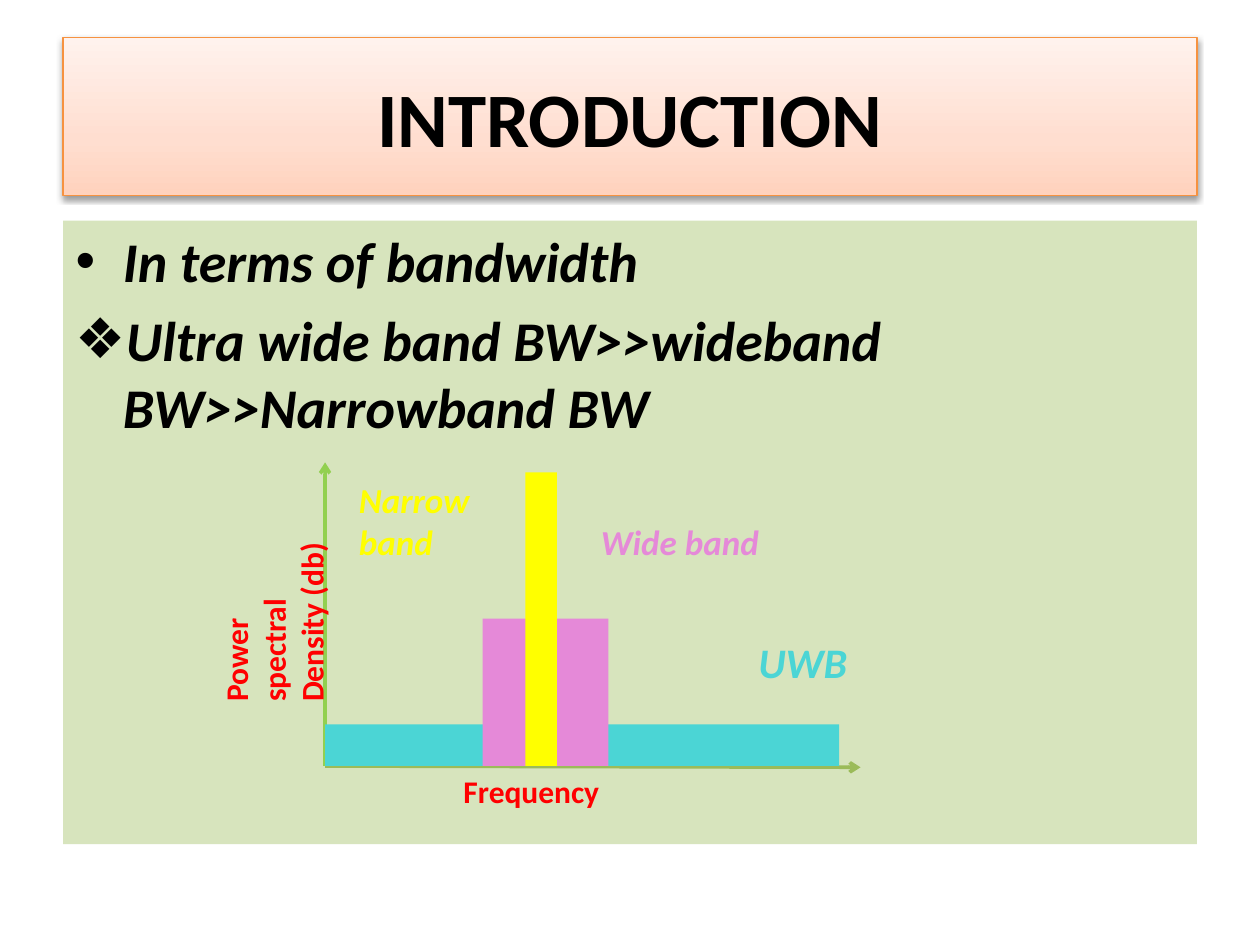
import pptx
import pptx.util
import pptx.dml.color
import pptx.enum.shapes
import pptx.enum.text
import pptx.oxml
import pptx.oxml.ns

Inches, Pt = pptx.util.Inches, pptx.util.Pt
NS = pptx.oxml.ns.nsdecls("a")


def color(hex_string):
    return pptx.dml.color.RGBColor.from_string(hex_string)


def add_run(p, text, size, hex_string, italic=False):
    r = p.add_run()
    r.text = text
    r.font.name = "Calibri"
    r.font.size = Pt(size)
    r.font.bold = True
    r.font.italic = italic
    r.font.color.rgb = color(hex_string)


prs = pptx.Presentation()
prs.slide_width, prs.slide_height = Inches(10), Inches(7.5)
s = prs.slides.add_slide(prs.slide_layouts[1])

# Title with gradient and soft shadow
title = s.shapes.title
title.left, title.top, title.width, title.height = [Inches(v) for v in (0.5, 0.3, 9, 1.25)]
title.line.color.rgb = color("F69240")
title.line.width = Pt(0.75)
stops = "".join(
    f'<a:gs pos="{pos * 1000}"><a:srgbClr val="{c}"/></a:gs>'
    for pos, c in ((0, "FFD2BD"), (35, "FFDED0"), (100, "FFF2ED")))
title._element.spPr.find(pptx.oxml.ns.qn("a:ln")).addprevious(pptx.oxml.parse_xml(
    f'<a:gradFill {NS} rotWithShape="1"><a:gsLst>{stops}</a:gsLst>'
    '<a:lin ang="16200000" scaled="1"/></a:gradFill>'))
title._element.spPr.append(pptx.oxml.parse_xml(
    f'<a:effectLst {NS}><a:outerShdw blurRad="{Pt(3.1)}" dist="{Pt(1.6)}" dir="5400000" '
    'rotWithShape="0"><a:srgbClr val="000000"><a:alpha val="38000"/></a:srgbClr>'
    '</a:outerShdw></a:effectLst>'))
p = title.text_frame.paragraphs[0]
p.alignment = pptx.enum.text.PP_ALIGN.CENTER
add_run(p, "INTRODUCTION", 44, "000000")

# Body list
body = s.placeholders[1]
body.left, body.top, body.width, body.height = [Inches(v) for v in (0.5, 1.75, 9, 4.95)]
body.fill.solid()
body.fill.fore_color.rgb = color("D7E4BD")
tf = body.text_frame
p = tf.paragraphs[0]
add_run(p, "In terms of bandwidth", 32, "000000", True)
p = tf.add_paragraph()
add_run(p, "Ultra wide band BW>>wideband BW>>Narrowband BW", 32, "000000", True)
pPr = p._p.get_or_add_pPr()
pPr.append(pptx.oxml.parse_xml(f'<a:buFont {NS} typeface="Arial"/>'))
pPr.append(pptx.oxml.parse_xml(f'<a:buChar {NS} char="❖"/>'))

# Axes
origin_x, base = 2.58, 6.08
for end_x, end_y, c in ((6.83, 6.09, "9BBB59"), (origin_x, 3.67, "92D050")):
    axis = s.shapes.add_connector(
        pptx.enum.shapes.MSO_CONNECTOR.STRAIGHT,
        Inches(origin_x), Inches(base), Inches(end_x), Inches(end_y))
    axis.line.color.rgb = color(c)
    axis.line.width = Pt(2)
    axis.line._get_or_add_ln().append(pptx.oxml.parse_xml(f'<a:tailEnd {NS} type="arrow"/>'))
    axis._element.spPr.append(pptx.oxml.parse_xml(f"<a:effectLst {NS}/>"))

# Spectrum bars standing on the frequency axis: left, width, height
for left, width, height, c in (
        (origin_x, 4.08, 0.33, "4BD5D5"),
        (3.83, 1, 1.17, "E589D8"),
        (4.17, 0.25, 2.33, "FFFF00")):
    bar = s.shapes.add_shape(
        pptx.enum.shapes.MSO_SHAPE.RECTANGLE,
        Inches(left), Inches(base - height), Inches(width), Inches(height))
    bar.fill.solid()
    bar.fill.fore_color.rgb = color(c)
    bar.line.fill.background()
    bar.shadow.inherit = False

# Axis and band labels
for text, box, size, c, italic, vertical in (
        ("Frequency", (3.58, base, 1.42, 0.4), 18, "FF0000", False, False),
        ("Power spectral Density (db)", (1.67, 4, 0.81, 1.67), 18, "FF0000", False, True),
        ("UWB", (5.92, 5, 1.17, 0.5), 24, "4BD5D5", True, False),
        ("Wide band", (4.67, 4.08, 2.58, 0.44), 20, "E589D8", True, False),
        ("Narrow band", (2.75, 3.75, 1.33, 0.77), 20, "FFFF00", True, False)):
    label = s.shapes.add_textbox(*[Inches(v) for v in box])
    tf = label.text_frame
    tf.word_wrap = True
    tf.auto_size = pptx.enum.text.MSO_AUTO_SIZE.SHAPE_TO_FIT_TEXT
    if vertical:
        tf._txBody.bodyPr.set("vert", "vert270")
    add_run(tf.paragraphs[0], text, size, c, italic)

prs.save("out.pptx")
